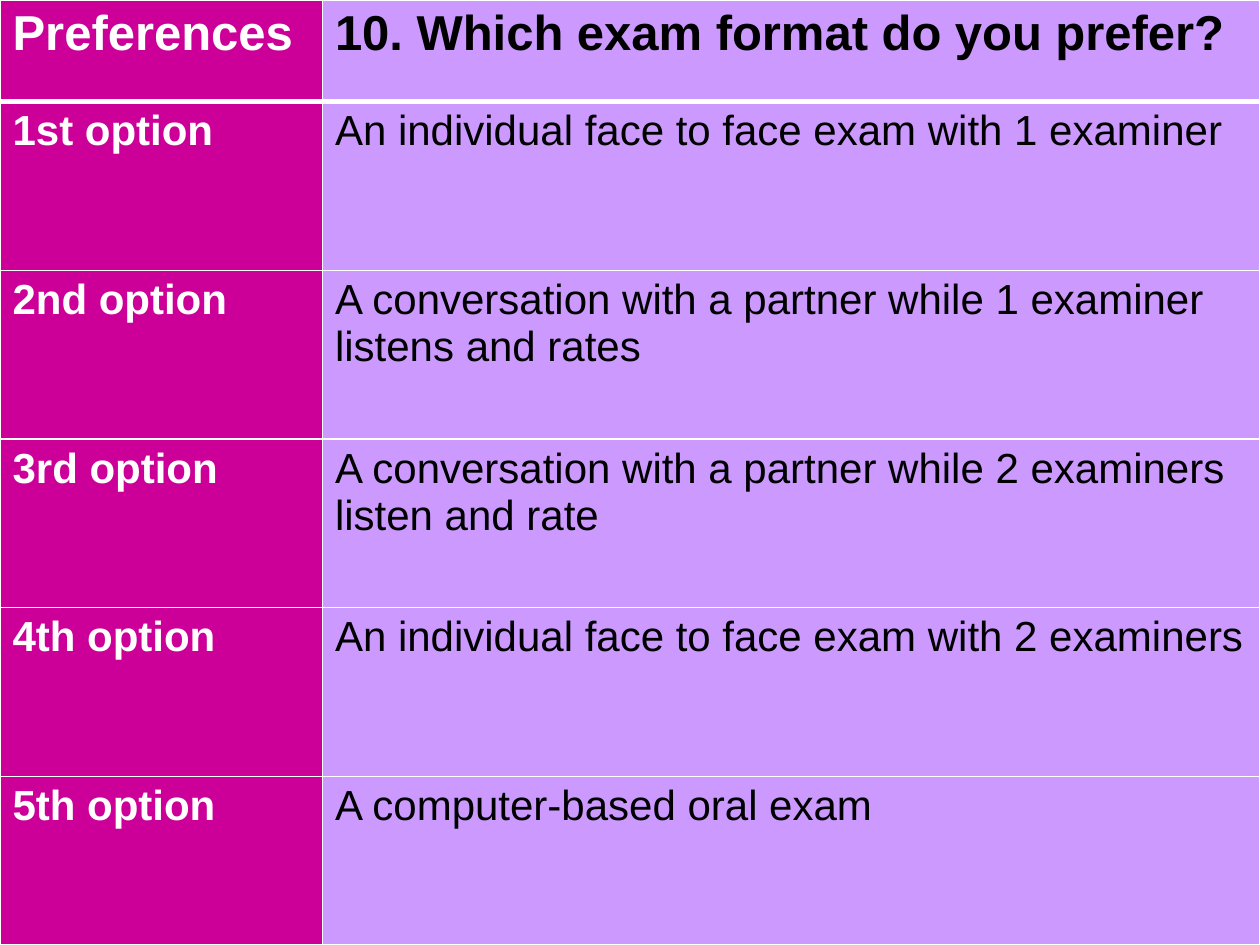
from lxml import etree
from pptx import Presentation
from pptx.dml.color import RGBColor
from pptx.oxml import ns
from pptx.util import Cm, Pt

WHITE = RGBColor(0xFF, 0xFF, 0xFF)
BLACK = RGBColor(0, 0, 0)
PINK = RGBColor(0xCC, 0x00, 0x99)
LILAC = RGBColor(0xCC, 0x99, 0xFF)

ROWS = [
    ("Preferences", "10. Which exam format do you prefer?"),
    ("1st option", "An individual face to face exam with 1 examiner"),
    ("2nd option", "A conversation with a partner while 1 examiner listens and rates"),
    ("3rd option", "A conversation with a partner while 2 examiners listen and rate"),
    ("4th option", "An individual face to face exam with 2 examiners"),
    ("5th option", "A computer-based oral exam"),
]


def write(cell, words, size=24, bold=False, color=BLACK):
    run = cell.text_frame.paragraphs[0].add_run()
    run.text = words
    font = run.font
    font.name = "Arial"
    font.size = Pt(size)
    font.bold = bold
    font.color.rgb = color


def edge(cell, side, width):
    """Draw a white border on one side (L, R, T or B) of the cell."""
    props = cell._tc.get_or_add_tcPr()
    line = etree.SubElement(props, ns.qn(f"a:ln{side}"), w=str(Pt(width)))
    fill = etree.SubElement(line, ns.qn("a:solidFill"))
    etree.SubElement(fill, ns.qn("a:srgbClr"), val=str(WHITE))


deck = Presentation()
deck.slide_width, deck.slide_height = Cm(25.4), Cm(19.05)
slide = deck.slides.add_slide(deck.slide_layouts[6])

table = slide.shapes.add_table(
    len(ROWS), 2, 0, 0, deck.slide_width, deck.slide_height).table
table.horz_banding = False

table.columns[0].width = Cm(6.5)
table.columns[1].width = Cm(18.9)
for i, row in enumerate(table.rows):
    row.height = Cm(3.4) if i else Cm(2.05)

for i, words in enumerate(ROWS):
    for j, back in enumerate((PINK, LILAC)):
        cell = table.cell(i, j)
        for side in "LRTB":
            # The rule below the header is shared by the first two rows.
            thick = (i, side) in ((0, "B"), (1, "T"))
            edge(cell, side, 3 if thick else 1)
        cell.fill.solid()
        cell.fill.fore_color.rgb = back
        write(cell, words[j], size=24 if i else 28,
              bold=i == 0 or j == 0, color=BLACK if j else WHITE)

deck.save("out.pptx")
